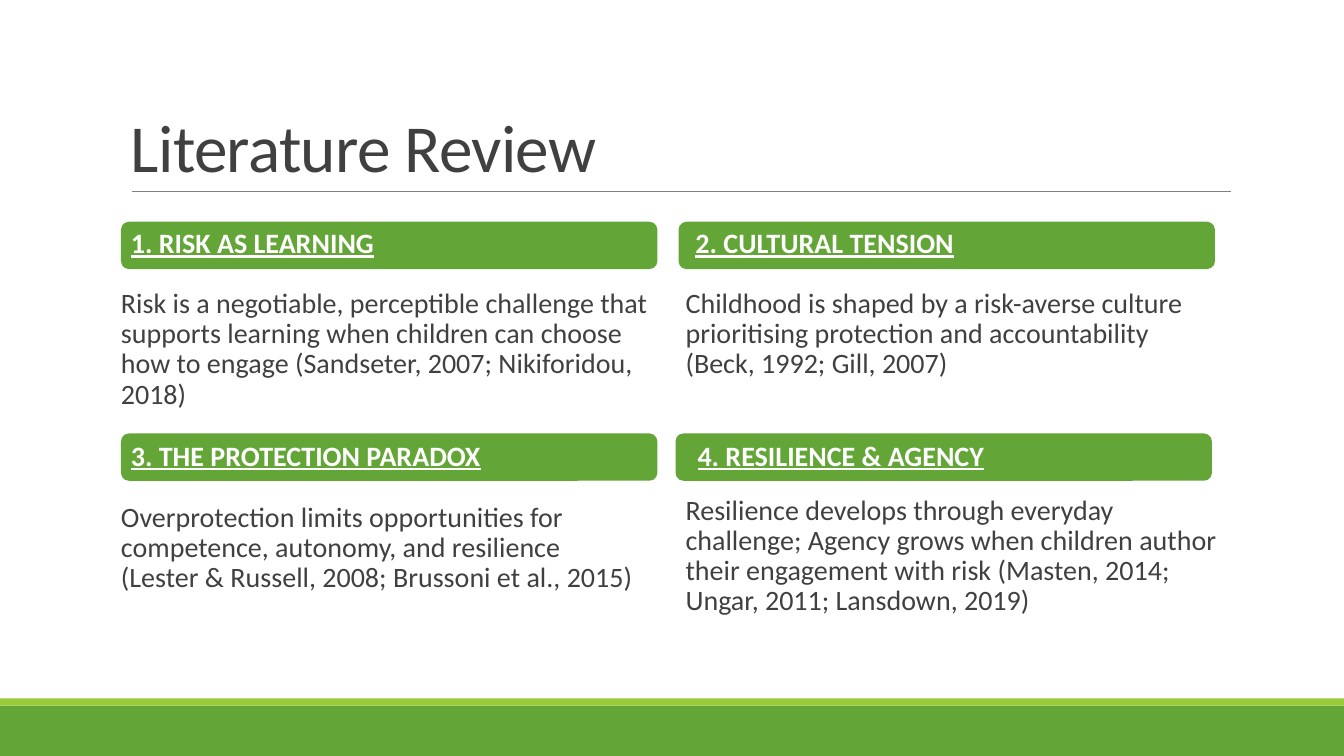
from pptx import Presentation
from pptx.dml.color import RGBColor
from pptx.enum import shapes as sh, text as tx
from pptx.oxml.ns import qn
from pptx.util import Inches, Pt

GREEN, LIME, GREY, DARK, WHITE = "63A537", "99CB38", "808080", "404040", "FFFFFF"
MID, LOW, TOP = tx.MSO_ANCHOR.MIDDLE, tx.MSO_ANCHOR.BOTTOM, tx.MSO_ANCHOR.TOP

# bar (left, top), heading (left, top), body (left, top, height), heading, body
THEMES = [
    ((1.2, 2.2), (1.2, 2.02), (1.2, 2.82, 1.55), "1. RISK AS LEARNING",
     "Risk is a negotiable, perceptible challenge that supports learning when "
     "children can choose how to engage (Sandseter, 2007; Nikiforidou, 2018)"),
    ((6.73, 2.2), (6.8, 2.02), (6.8, 2.82, 1.55), "2. CULTURAL TENSION",
     "Childhood is shaped by a risk-averse culture prioritising protection and "
     "accountability\n(Beck, 1992; Gill, 2007)"),
    ((1.2, 4.3), (1.2, 4.13), (1.2, 4.94, 1.55), "3. THE PROTECTION PARADOX",
     "Overprotection limits opportunities for competence, autonomy, and "
     "resilience\n(Lester & Russell, 2008; Brussoni et al., 2015)"),
    ((6.7, 4.3), (6.82, 4.13), (6.8, 4.87, 1.74), "4. RESILIENCE & AGENCY",
     "Resilience develops through everyday challenge; Agency grows when children "
     "author their engagement with risk (Masten, 2014; Ungar, 2011; Lansdown, 2019)"),
]


def color(code):
    return RGBColor.from_string(code)


def add_bar(slide, box, fill, kind=sh.MSO_SHAPE.RECTANGLE):
    bar = slide.shapes.add_shape(kind, *map(Inches, box))
    bar.shadow.inherit = False
    bar.fill.solid()
    bar.fill.fore_color.rgb = color(fill)
    bar.line.fill.background()


def add_rule(slide, left, right, top):
    rule = slide.shapes.add_connector(
        sh.MSO_CONNECTOR.STRAIGHT, *map(Inches, (left, top, right, top)))
    rule.line.color.rgb = color(GREY)
    rule.line.width = Pt(0.5)
    props = rule._element.spPr
    props.append(props.makeelement(qn("a:effectLst"), {}))


def add_text(slide, box, words, size=20, ink=DARK, anchor=TOP, inset=0.1,
             lead=0.9, after=2, bold=False, under=False, track=0):
    """Add a text box; track is the letter spacing in points."""
    frame = slide.shapes.add_textbox(*map(Inches, box)).text_frame
    frame.word_wrap = True
    frame.vertical_anchor = anchor
    frame.margin_left = frame.margin_right = Inches(inset)
    para = frame.paragraphs[0]
    para.text = words
    para.line_spacing = lead
    para.space_after = Pt(after)
    for run in para.runs:
        font = run.font
        font.name, font.size = "Calibri", Pt(size)
        font.bold, font.underline = bold, under
        font.color.rgb = color(ink)
        if track:
            run._r.get_or_add_rPr().set("spc", str(int(track * 100)))


def main():
    deck = Presentation()
    deck.slide_width, deck.slide_height = Inches(13.33), Inches(7.5)
    slide = deck.slides.add_slide(deck.slide_layouts[6])

    add_bar(slide, (0, 7, 13.33, 0.5), GREEN)
    add_bar(slide, (0, 6.93, 13.33, 0.07), LIME)
    add_rule(slide, 1.31, 12.21, 1.9)
    add_text(slide, (1.2, 0.31, 11, 1.59), "Literature Review", size=48,
             anchor=LOW, lead=0.85, after=0, track=-0.5)

    for bar, head, (left, top, height), title, body in THEMES:
        add_bar(slide, (*bar, 5.32, 0.47), GREEN, sh.MSO_SHAPE.ROUNDED_RECTANGLE)
        add_text(slide, (*head, 5.4, 0.81), title, ink=WHITE, anchor=MID,
                 bold=True, under=True)
        add_text(slide, (left, top, 5.4, height), body, inset=0)

    deck.save("out.pptx")


if __name__ == "__main__":
    main()
